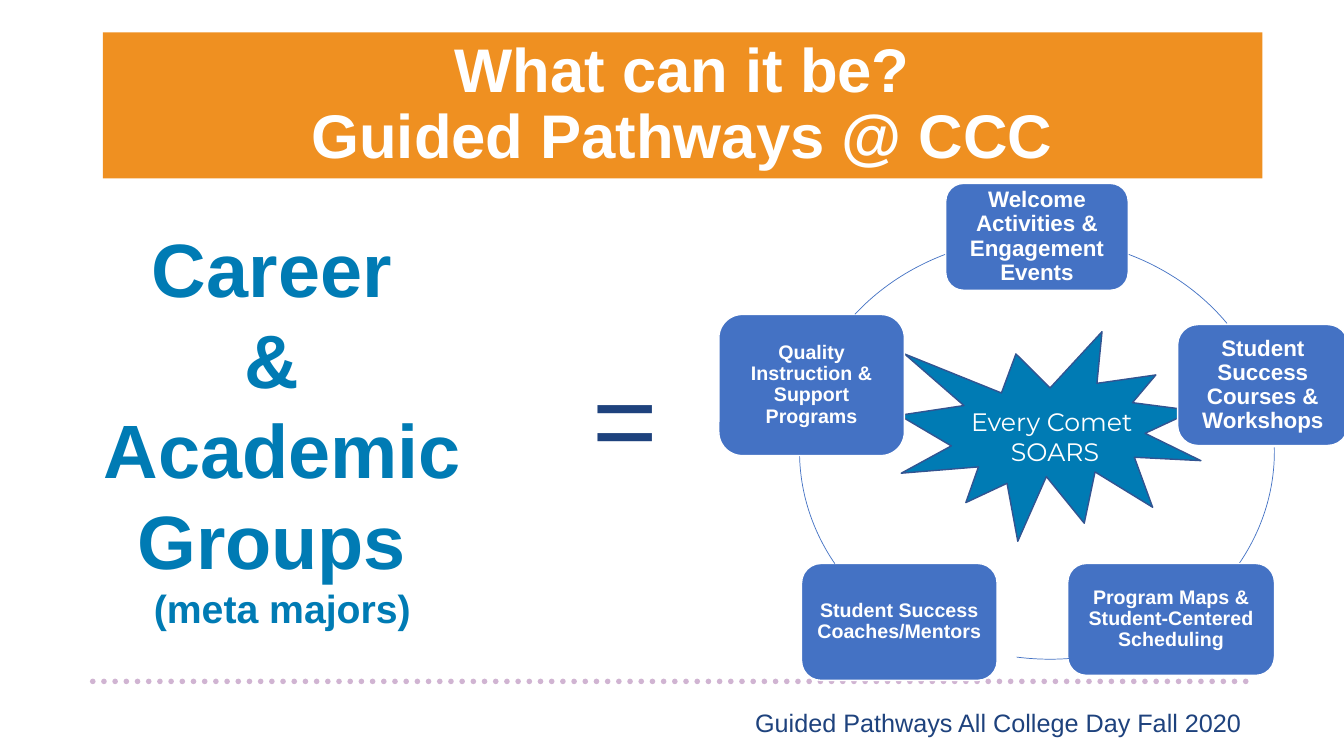
import pptx
import pptx.util
import pptx.dml.color
import pptx.enum.dml
import pptx.enum.shapes
import pptx.enum.text
import pptx.oxml
import pptx.oxml.ns
import lxml.etree

Inches = pptx.util.Inches
Pt = pptx.util.Pt
SHAPE = pptx.enum.shapes.MSO_SHAPE
ALIGN = pptx.enum.text.PP_ALIGN
ANCHOR = pptx.enum.text.MSO_ANCHOR

WHITE, NAVY, TEAL, BLUE, ORANGE = "FFFFFF", "1E427D", "007BB4", "4472C4", "EF9021"

TITLE = "What can it be?\nGuided Pathways @ CCC"
FOOTER = "Guided Pathways All College Day Fall 2020"
GROUPS = [("Career ", 54), ("& ", 54), ("Academic Groups ", 54), ("(meta majors)", 28)]
SOARS = [("Every Comet ", 18), ("SOARS", 18)]
SUPPORTS = [
    ("Welcome Activities & Engagement Events", 16, (9.38, 1.82, 1.81, 1.06), 0.12),
    ("Student Success Courses & Workshops", 16, (11.68, 3.22, 1.69, 1.2), 0.13),
    ("Program Maps & Student-Centered Scheduling", 14, (10.59, 5.59, 2.05, 1.11), 0.11),
    ("Student Success Coaches/Mentors", 14, (7.95, 5.59, 1.94, 1.16), 0.06),
    ("Quality Instruction & Support Programs", 14, (7.13, 3.12, 1.84, 1.4), 0.13),
]
RING = (7.93, 2.36, 4.71, 4.24)
LOWER_RING = (8.06, 2.3, 4.71, 4.24)
ARCS = [(RING, 295, 326), (RING, 359, 29), (LOWER_RING, 79, 99), (RING, 151, 179), (RING, 217, 245)]

deck = pptx.Presentation()
deck.slide_width, deck.slide_height = Inches(13.33), Inches(7.5)
slide = deck.slides.add_slide(deck.slide_layouts[6])


def color(value):
    return pptx.dml.color.RGBColor.from_string(value)


def write(frame, text, size=18, ink=WHITE, font="Arial", bold=False,
          align=ALIGN.CENTER, anchor=ANCHOR.TOP, spacing=None, inset=None):
    frame.word_wrap = True
    frame.vertical_anchor = anchor
    if inset is not None:
        frame.margin_left = frame.margin_right = Inches(inset)
        frame.margin_top = frame.margin_bottom = Inches(inset)
    lines = [(text, size)] if isinstance(text, str) else text
    for index, (words, points) in enumerate(lines):
        paragraph = frame.add_paragraph() if index else frame.paragraphs[0]
        paragraph.text = words
        paragraph.alignment = align
        if spacing:
            paragraph.line_spacing = spacing
        for run in paragraph.runs:
            run.font.size = Pt(points)
            run.font.name = font
            run.font.bold = bold
            run.font.color.rgb = color(ink)


def textbox(place, text, **style):
    write(slide.shapes.add_textbox(*map(Inches, place)).text_frame, text, **style)


def draw(kind, place, fill=None, line=None, weight=1):
    shape = slide.shapes.add_shape(kind, *map(Inches, place))
    shape.shadow.inherit = False
    if fill:
        shape.fill.solid()
        shape.fill.fore_color.rgb = color(fill)
    else:
        shape.fill.background()
    if line:
        shape.line.color.rgb = color(line)
        shape.line.width = Pt(weight)
    else:
        shape.line.fill.background()
    return shape


qn = pptx.oxml.ns.qn
divider = slide.shapes.add_connector(
    pptx.enum.shapes.MSO_CONNECTOR.STRAIGHT, Inches(0.92), Inches(6.76), Inches(12.42), Inches(6.76))
divider.line.color.rgb = color("823486")
divider.line.width = Pt(4)
divider.line.dash_style = pptx.enum.dml.MSO_LINE.ROUND_DOT
stroke = divider.line._get_or_add_ln()
stroke.set("cap", "rnd")
lxml.etree.SubElement(stroke.find(".//" + qn("a:srgbClr")), qn("a:alpha"), val="37000")
lxml.etree.SubElement(divider._element.spPr, qn("a:effectLst"))

textbox((6, 6.97, 6.41, 0.4), FOOTER, ink=NAVY, align=ALIGN.RIGHT)

banner = draw(SHAPE.RECTANGLE, (1.02, 0.32, 11.5, 1.45), ORANGE)
write(banner.text_frame, TITLE, size=44, bold=True, anchor=ANCHOR.MIDDLE, spacing=0.9)

draw(SHAPE.EXPLOSION1, (8.92, 3.29, 2.99, 2.08), TEAL, "325491")
textbox((9.33, 3.98, 2.27, 0.71), SOARS, font="Montserrat")

for (label, size, place, inset), (ring, start, end) in zip(SUPPORTS, ARCS):
    support = draw(SHAPE.ROUNDED_RECTANGLE, place, BLUE, WHITE)
    write(support.text_frame, label, size=size, bold=True,
          anchor=ANCHOR.MIDDLE, spacing=0.9, inset=inset)
    arc = draw(SHAPE.ARC, ring, line=BLUE, weight=0.5)
    for index, degrees in enumerate((start, end)):
        arc.adjustments[index] = degrees * 0.6

textbox((0.03, 2.15, 5.54, 4.21), GROUPS, ink=TEAL, bold=True)
textbox((5.78, 3.41, 0.69, 1.45), "=", size=80, ink=NAVY)

deck.save("out.pptx")
